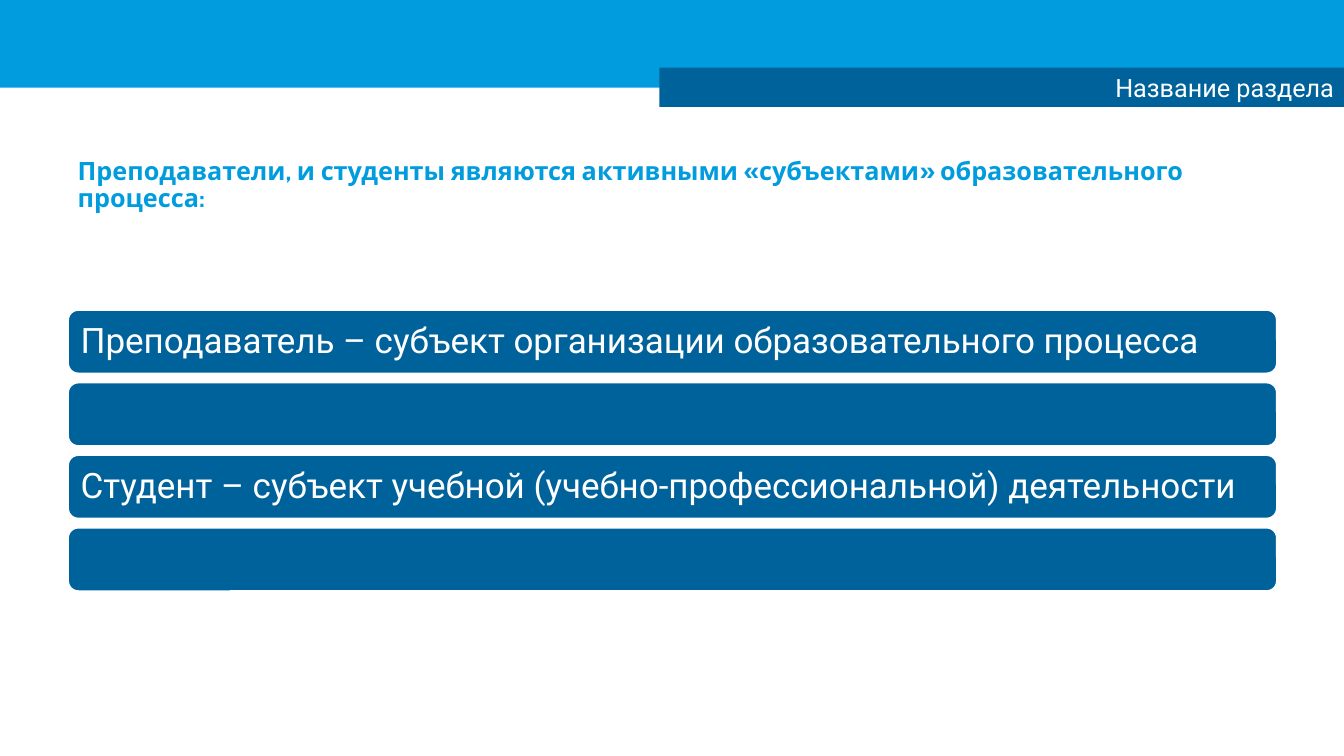
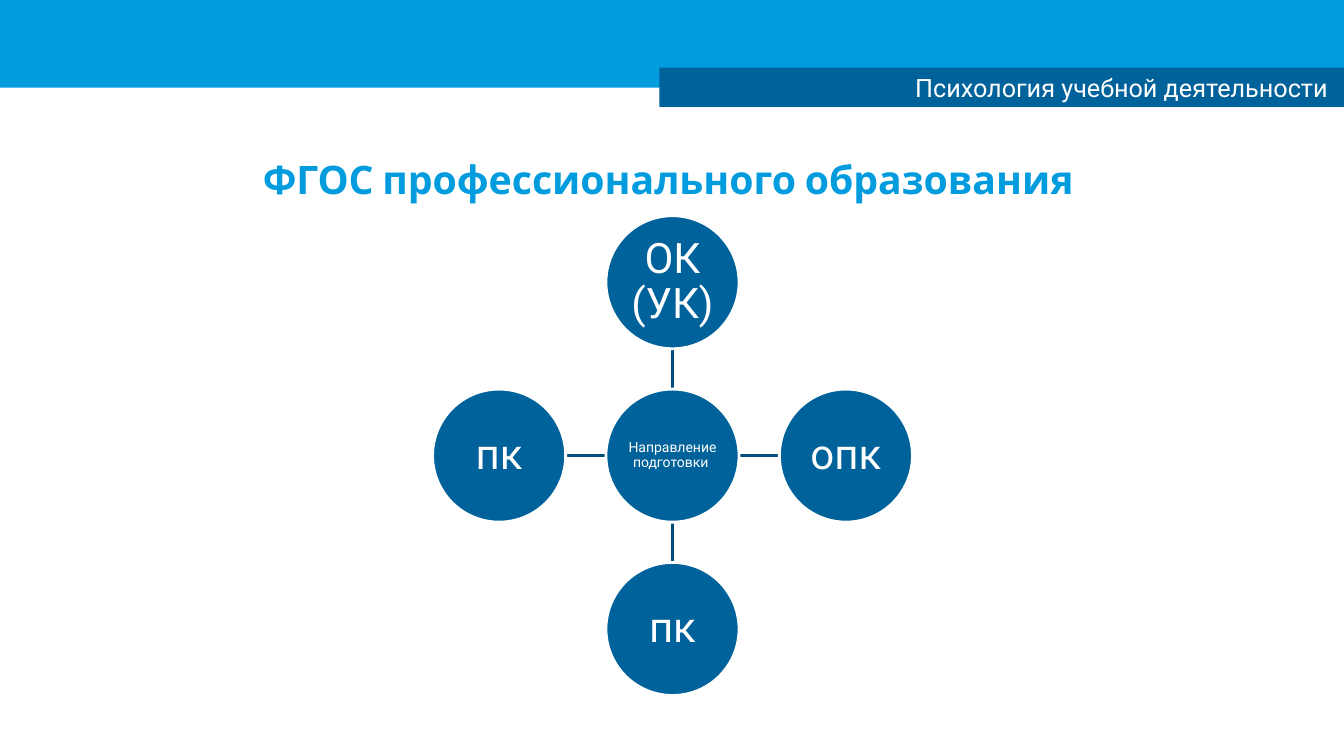
from collections import namedtuple

from pptx import Presentation
from pptx.dml.color import RGBColor
from pptx.enum.shapes import MSO_CONNECTOR, MSO_SHAPE
from pptx.enum.text import MSO_ANCHOR, MSO_AUTO_SIZE, PP_ALIGN
from pptx.oxml.ns import qn
from pptx.util import Inches, Pt

COLORS = {"band": "009CDE", "block": "00629B", "link": "004E7C", "white": "FFFFFF"}
TITLE_FONT, BODY_FONT = "Cabin", "Roboto"
PAGE_WIDTH, PAGE_HEIGHT = 13.33, 7.5
Box = namedtuple("Box", "left top width height")

TOP_BAND = Box(0, 0, PAGE_WIDTH, 0.87)
SECTION_BAND = Box(6.54, 0.67, 6.79, 0.39)


def color(name):
    """Return a palette colour."""
    return RGBColor.from_string(COLORS[name])


def inches(box):
    """Turn a box into lengths."""
    return [Inches(value) for value in box]


def write(frame, text, font, size, ink, align, spacing=0.9, bold=False):
    """Put one formatted paragraph in the middle of a text frame."""
    frame.word_wrap = True
    frame.auto_size = MSO_AUTO_SIZE.NONE
    frame.vertical_anchor = MSO_ANCHOR.MIDDLE
    frame.text = text
    para = frame.paragraphs[0]
    para.alignment = align
    para.line_spacing = spacing
    for span in para.runs:
        span.font.name = font
        span.font.size = Pt(size)
        span.font.bold = bold
        span.font.color.rgb = color(ink)


def add_block(page, kind, box, fill="block", outlined=False):
    """Add a filled shape, with a white outline if wanted."""
    shape = page.shapes.add_shape(kind, *inches(box))
    shape.shadow.inherit = False
    shape.fill.solid()
    shape.fill.fore_color.rgb = color(fill)
    if outlined:
        shape.line.color.rgb = color("white")
        shape.line.width = Pt(2)
    else:
        shape.line.fill.background()
    return shape


def add_link(page, start, end):
    """Draw a straight line between two points."""
    link = page.shapes.add_connector(MSO_CONNECTOR.STRAIGHT, *inches(start + end))
    link.line.color.rgb = color("link")
    link.line.width = Pt(2)
    properties = link._element.spPr
    properties.append(properties.makeelement(qn("a:effectLst"), {}))


def add_page(deck, section, title, title_box, size, align):
    """Add a slide with its bands, section name and title."""
    page = deck.slides.add_slide(deck.slide_layouts.get_by_name("Title Only"))
    add_block(page, MSO_SHAPE.RECTANGLE, TOP_BAND, "band")
    header = add_block(page, MSO_SHAPE.RECTANGLE, SECTION_BAND)
    write(header.text_frame, section, BODY_FONT, 18, "white", PP_ALIGN.RIGHT, 1)
    heading = page.shapes.title
    heading.left, heading.top, heading.width, heading.height = inches(title_box)
    write(heading.text_frame, title, TITLE_FONT, size, "band", align, bold=True)
    return page


def add_bars(page, box, texts, gap):
    """Stack equal rounded bars in a box."""
    height = (box.height - gap * (len(texts) - 1)) / len(texts)
    for row, text in enumerate(texts):
        place = Box(box.left, box.top + row * (height + gap), box.width, height)
        bar = add_block(page, MSO_SHAPE.ROUNDED_RECTANGLE, place, outlined=True)
        if text:
            write(bar.text_frame, text, BODY_FONT, 25, "white", PP_ALIGN.LEFT)


def add_circle(page, center, diameter, text, size):
    """Add a labelled circle around a center."""
    x, y = center
    place = Box(x - diameter / 2, y - diameter / 2, diameter, diameter)
    circle = add_block(page, MSO_SHAPE.OVAL, place, outlined=True)
    frame = circle.text_frame
    frame.margin_left = frame.margin_right = Inches(0.02)
    frame.margin_top = frame.margin_bottom = Inches(0.02)
    write(frame, text, BODY_FONT, size, "white", PP_ALIGN.CENTER)


def add_radial(page, box, diameter, hub, satellites):
    """Place four circles around a hub and link them to it."""
    x, y = box.left + box.width / 2, box.top + box.height / 2
    reach, radius = (box.width - diameter) / 2, diameter / 2
    directions = [(0, -1), (1, 0), (0, 1), (-1, 0)]
    for (across, down), text in zip(directions, satellites):
        start, end = [
            (x + across * distance, y + down * distance)
            for distance in (radius, reach - radius)
        ]
        add_link(page, start, end)
        add_circle(page, (x + across * reach, y + down * reach), diameter, text, 30)
    add_circle(page, (x, y), diameter, hub, 10)


def build_subjects(deck):
    """Build the slide on the subjects of education."""
    page = add_page(
        deck,
        "Название раздела",
        "Преподаватели, и студенты являются активными «субъектами» "
        "образовательного процесса:",
        Box(0.67, 1.23, 12, 1.22),
        18,
        PP_ALIGN.LEFT,
    )
    texts = [
        "Преподаватель – субъект организации образовательного процесса",
        "",
        "Студент – субъект учебной (учебно-профессиональной) деятельности",
        "",
    ]
    add_bars(page, Box(0.67, 3.07, 12, 2.8), texts, 0.08)


def build_standard(deck):
    """Build the slide on the education standard."""
    page = add_page(
        deck,
        "Психология учебной деятельности ",
        "ФГОС профессионального образования ",
        Box(0.67, 1.35, 12, 0.9),
        28,
        PP_ALIGN.CENTER,
    )
    satellites = ["ОК (УК)", "опк", "пк", "пк"]
    add_radial(
        page, Box(4.29, 2.14, 4.76, 4.76), 1.32, "Направление подготовки ", satellites
    )


def main():
    """Build and save the deck."""
    deck = Presentation()
    deck.slide_width, deck.slide_height = Inches(PAGE_WIDTH), Inches(PAGE_HEIGHT)
    build_subjects(deck)
    build_standard(deck)
    deck.save("out.pptx")


if __name__ == "__main__":
    main()
